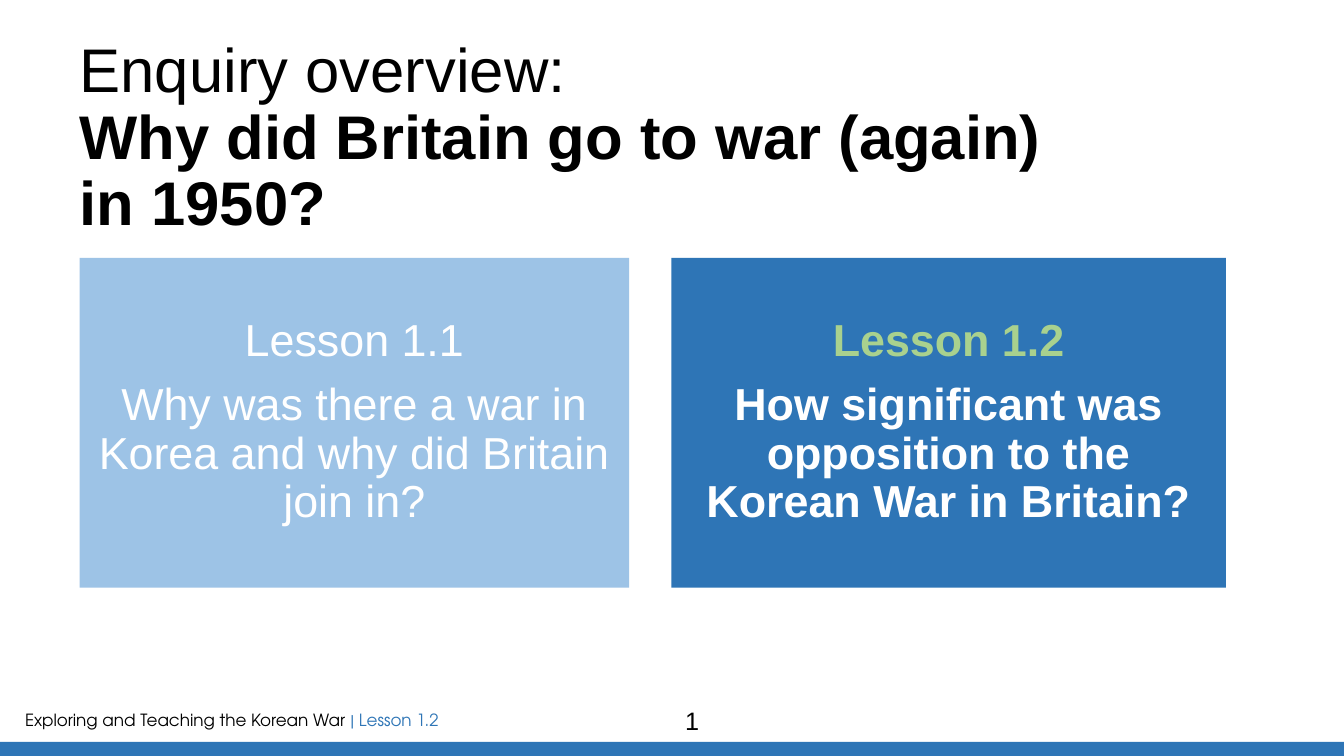
from pptx import Presentation
from pptx.dml.color import RGBColor
from pptx.enum.shapes import MSO_SHAPE
from pptx.enum.text import MSO_ANCHOR, MSO_AUTO_SIZE, PP_ALIGN
from pptx.util import Inches, Pt

RECTANGLE = MSO_SHAPE.RECTANGLE
TOP, MIDDLE = MSO_ANCHOR.TOP, MSO_ANCHOR.MIDDLE
LEFT, CENTER = PP_ALIGN.LEFT, PP_ALIGN.CENTER
NO_AUTOFIT = MSO_AUTO_SIZE.NONE

# Content
BLACK, WHITE, BLUE = "000000", "FFFFFF", "2E75B6"
HEADING = [
    ("Enquiry overview:", False),
    ("Why did Britain go to war (again)", True),
    ("in 1950?", True),
]
LESSONS = [
    {"label": "Lesson 1.1", "label_color": WHITE, "fill": "9DC3E6", "bold": False, "width": 5.45,
     "question": "Why was there a war in Korea and why did Britain join in?"},
    {"label": "Lesson 1.2", "label_color": "A9D18E", "fill": BLUE, "bold": True, "width": 5.5,
     "question": "How significant was opposition to the Korean War in Britain?"},
]
FOOTER = [("Exploring and Teaching the Korean War ", BLACK), ("| Lesson 1.2", BLUE)]
PAGE_NUMBER = "1"

# Layout, in inches
SLIDE_W, SLIDE_H = 13.33, 7.5
MARGIN = 0.79
CARD_TOP, CARD_H, CARD_GAP, CARD_INSET = 2.56, 3.27, 0.42, 0.14
BAND_H = 0.14


def color(hex_string):
    return RGBColor.from_string(hex_string)


def add_run(paragraph, text, size, hex_color, bold=False, font="Arial"):
    run = paragraph.add_run()
    run.text = text
    for name, value in {"name": font, "size": Pt(size), "bold": bold}.items():
        setattr(run.font, name, value)
    run.font.color.rgb = color(hex_color)


def set_frame(frame, anchor, inset):
    settings = {"word_wrap": True, "auto_size": NO_AUTOFIT, "vertical_anchor": anchor}
    for side in ("left", "top", "right", "bottom"):
        settings[f"margin_{side}"] = Inches(inset)
    for name, value in settings.items():
        setattr(frame, name, value)


def add_block(slide, box, fill):
    block = slide.shapes.add_shape(RECTANGLE, *map(Inches, box))
    block.shadow.inherit = False
    block.fill.solid()
    block.fill.fore_color.rgb = color(fill)
    block.line.fill.background()
    return block


def add_caption(slide, box, runs, size, align, font):
    caption = slide.shapes.add_textbox(*map(Inches, box))
    caption.text_frame.word_wrap = True
    paragraph = caption.text_frame.paragraphs[0]
    paragraph.alignment = align
    for text, hex_color in runs:
        add_run(paragraph, text, size, hex_color, font=font)


def add_heading(slide):
    heading = slide.shapes.title
    box = {"left": MARGIN, "top": 0.39, "width": 11.5, "height": 1.45}
    for name, value in box.items():
        setattr(heading, name, Inches(value))
    set_frame(heading.text_frame, TOP, 0)
    paragraph = heading.text_frame.paragraphs[0]
    paragraph.alignment = LEFT
    paragraph.line_spacing = 0.9
    for i, (line, bold) in enumerate(HEADING):
        if i:
            paragraph.add_line_break()
        add_run(paragraph, line, 44, BLACK, bold)


def add_lessons(slide):
    left = MARGIN
    for lesson in LESSONS:
        card = add_block(slide, (left, CARD_TOP, lesson["width"], CARD_H), lesson["fill"])
        frame = card.text_frame
        set_frame(frame, MIDDLE, CARD_INSET)
        label, question = frame.paragraphs[0], frame.add_paragraph()
        for paragraph in (label, question):
            paragraph.alignment = CENTER
            paragraph.line_spacing = 0.9
        label.space_after = Pt(11.2)
        add_run(label, lesson["label"], 32, lesson["label_color"], lesson["bold"])
        add_run(question, lesson["question"], 32, WHITE, lesson["bold"])
        left += lesson["width"] + CARD_GAP


def main():
    deck = Presentation()
    deck.slide_width, deck.slide_height = Inches(SLIDE_W), Inches(SLIDE_H)
    slide = deck.slides.add_slide(deck.slide_layouts[5])

    # Footer and bottom band
    add_caption(slide, (0.15, 6.99, 4.51, 0.3), FOOTER, 12, LEFT, "TeX Gyre Adventor")
    add_block(slide, (0, SLIDE_H - BAND_H, SLIDE_W, BAND_H), BLUE)

    # Heading, lesson cards and page number
    add_heading(slide)
    add_lessons(slide)
    add_caption(slide, (4.33, 6.95, 5.07, 0.4), [(PAGE_NUMBER, BLACK)], 18, CENTER, "Arial")

    deck.save("out.pptx")


if __name__ == "__main__":
    main()
